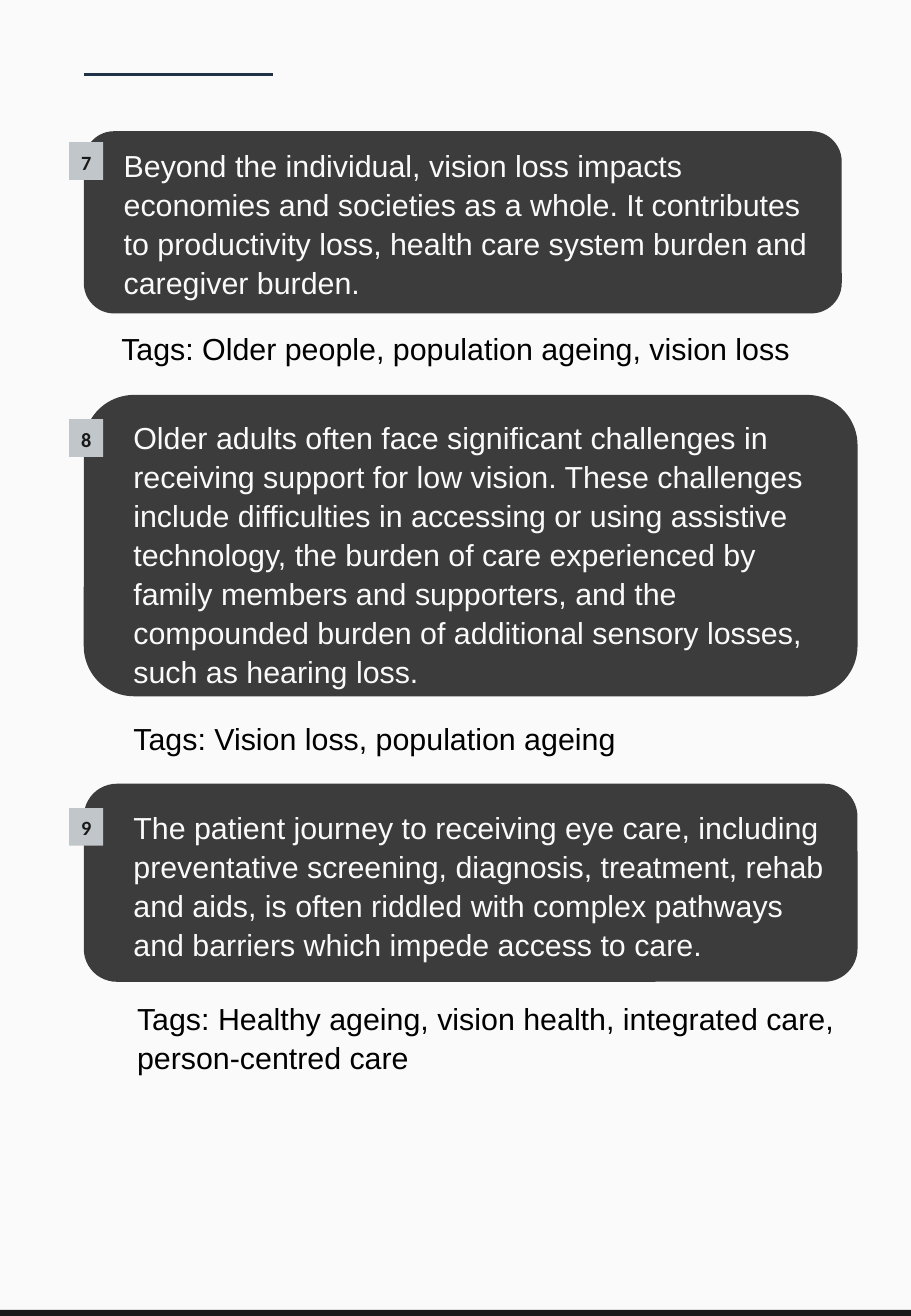
from dataclasses import dataclass

from lxml import etree
from pptx import Presentation
from pptx import util as u
from pptx.dml.color import RGBColor
from pptx.enum import shapes, text
from pptx.oxml import ns


@dataclass(frozen=True)
class Theme:
    paper: str = "FAFAFA"
    ink: str = "000000"
    panel: str = "3C3C3C"
    badge: str = "C0C6C9"
    dark: str = "191919"
    rule: str = "1F3248"
    body_font: str = "Arial"
    badge_font: str = "Calibri"
    body_size: int = 18
    badge_size: int = 12


@dataclass(frozen=True)
class Finding:
    number: str
    message: str
    tags: str
    panel: tuple
    message_area: tuple
    tags_area: tuple
    badge_top: float


THEME = Theme()
WIDTH, HEIGHT = 7.5, 10.83
MARGIN = 0.69
FINDINGS = (
    Finding(
        "7",
        "Beyond the individual, vision loss impacts economies and societies as a whole. "
        "It contributes to productivity loss, health care system burden and caregiver burden.",
        "Tags: Older people, population ageing, vision loss",
        (MARGIN, 1.08, 6.24, 1.5), (0.92, 1.14, 5.9, 1.37), (0.9, 2.65, 6.02, 0.4), 1.17,
    ),
    Finding(
        "8",
        "Older adults often face significant challenges in receiving support for low vision. "
        "These challenges include difficulties in accessing or using assistive technology, "
        "the burden of care experienced by family members and supporters, and the compounded "
        "burden of additional sensory losses, such as hearing loss.",
        "Tags: Vision loss, population ageing",
        (MARGIN, 3.25, 6.37, 2.48), (1, 3.38, 5.93, 2.35), (1, 5.86, 6.02, 0.4), 3.45,
    ),
    Finding(
        "9",
        "The patient journey to receiving eye care, including preventative screening, "
        "diagnosis, treatment, rehab and aids, is often riddled with complex pathways "
        "and barriers which impede access to care.",
        "Tags: Healthy ageing, vision health, integrated care, person-centred care",
        (MARGIN, 6.45, 6.37, 1.63), (1, 6.59, 5.93, 1.37), (1.03, 8.16, 6.02, 0.73), 6.65,
    ),
)


def inches(area):
    return [u.Inches(value) for value in area]


def write(box, words, color, font=THEME.body_font, size=THEME.body_size, bold=False):
    box.text_frame.word_wrap = True
    para = box.text_frame.paragraphs[0]
    para.line_spacing = 1.07
    para.space_after = u.Pt(6)
    span = para.add_run()
    span.text = words
    span.font.name = font
    span.font.size = u.Pt(size)
    span.font.bold = bold
    span.font.color.rgb = RGBColor.from_string(color)
    return para


def add_text(page, area, words, color):
    write(page.shapes.add_textbox(*inches(area)), words, color)


def add_block(page, kind, area, color):
    block = page.shapes.add_shape(kind, *inches(area))
    block.shadow.inherit = False
    block.fill.solid()
    block.fill.fore_color.rgb = RGBColor.from_string(color)
    block.line.fill.background()
    return block


def add_badge(page, top, number):
    area = (0.57, top, 0.28, 0.31)
    badge = add_block(page, shapes.MSO_SHAPE.RECTANGLE, area, THEME.badge)
    frame = badge.text_frame
    frame.margin_left = frame.margin_right = 0
    frame.vertical_anchor = text.MSO_ANCHOR.TOP
    para = write(badge, number, THEME.dark, THEME.badge_font, THEME.badge_size, True)
    para.alignment = text.PP_ALIGN.CENTER


def add_rule(page, left, right, top):
    rule = page.shapes.add_connector(
        shapes.MSO_CONNECTOR.STRAIGHT, *inches((left, top, right, top))
    )
    rule.line.color.rgb = RGBColor.from_string(THEME.rule)
    rule.line.width = u.Pt(1.75)
    etree.SubElement(rule._element.spPr, ns.qn("a:effectLst"))


def add_finding(page, finding):
    add_block(page, shapes.MSO_SHAPE.ROUNDED_RECTANGLE, finding.panel, THEME.panel)
    add_text(page, finding.message_area, finding.message, THEME.paper)
    add_text(page, finding.tags_area, finding.tags, THEME.ink)
    add_badge(page, finding.badge_top, finding.number)


def main():
    """Build the page of numbered vision loss findings and save it."""
    deck = Presentation()
    deck.slide_width, deck.slide_height = inches((WIDTH, HEIGHT))
    page = deck.slides.add_slide(deck.slide_layouts[6])
    page.background.fill.solid()
    page.background.fill.fore_color.rgb = RGBColor.from_string(THEME.paper)
    add_rule(page, MARGIN, 2.25, 0.61)
    for finding in FINDINGS:
        add_finding(page, finding)
    add_block(page, shapes.MSO_SHAPE.RECTANGLE, (0, 10.78, WIDTH, 0.05), THEME.dark)
    deck.save("out.pptx")


if __name__ == "__main__":
    main()
